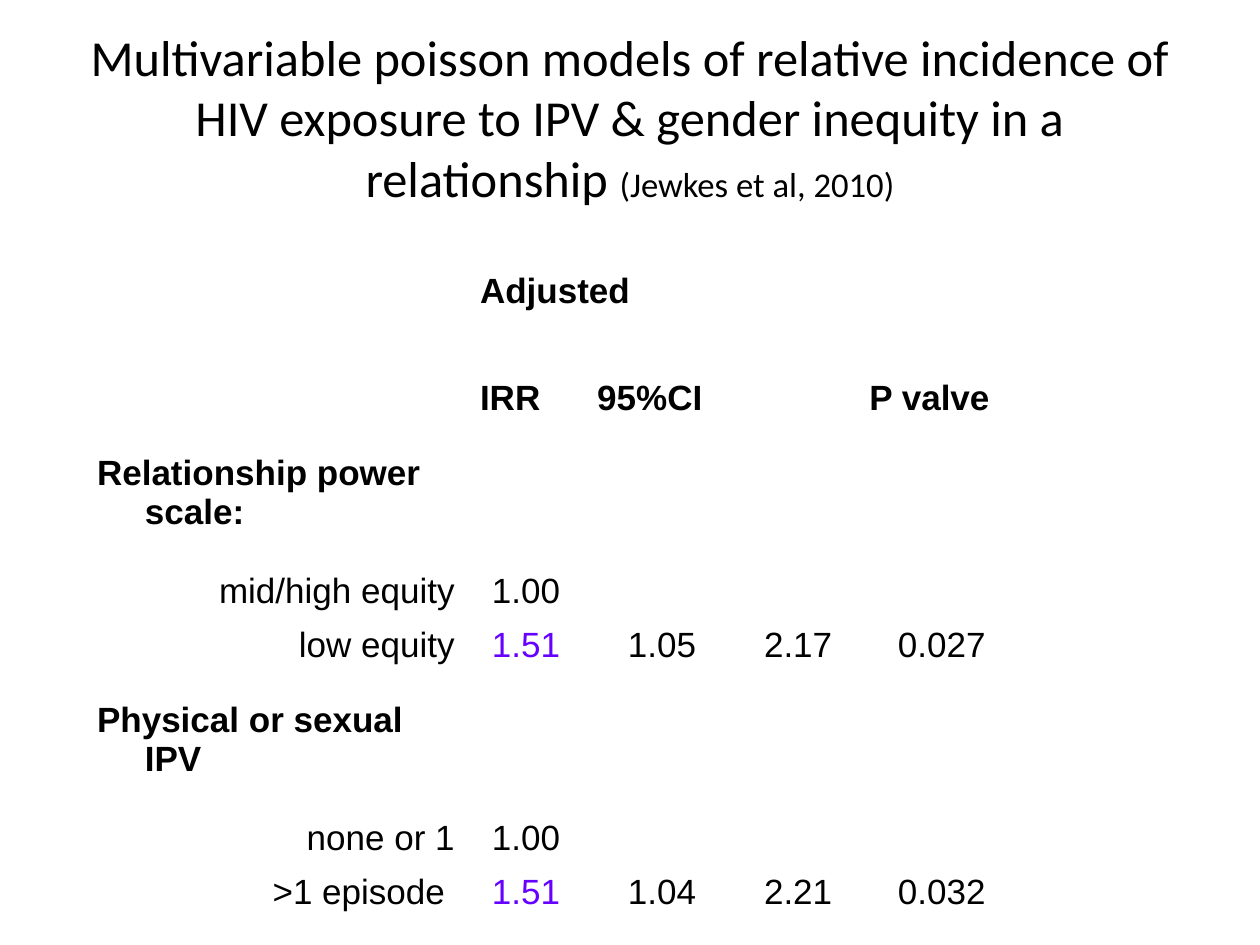
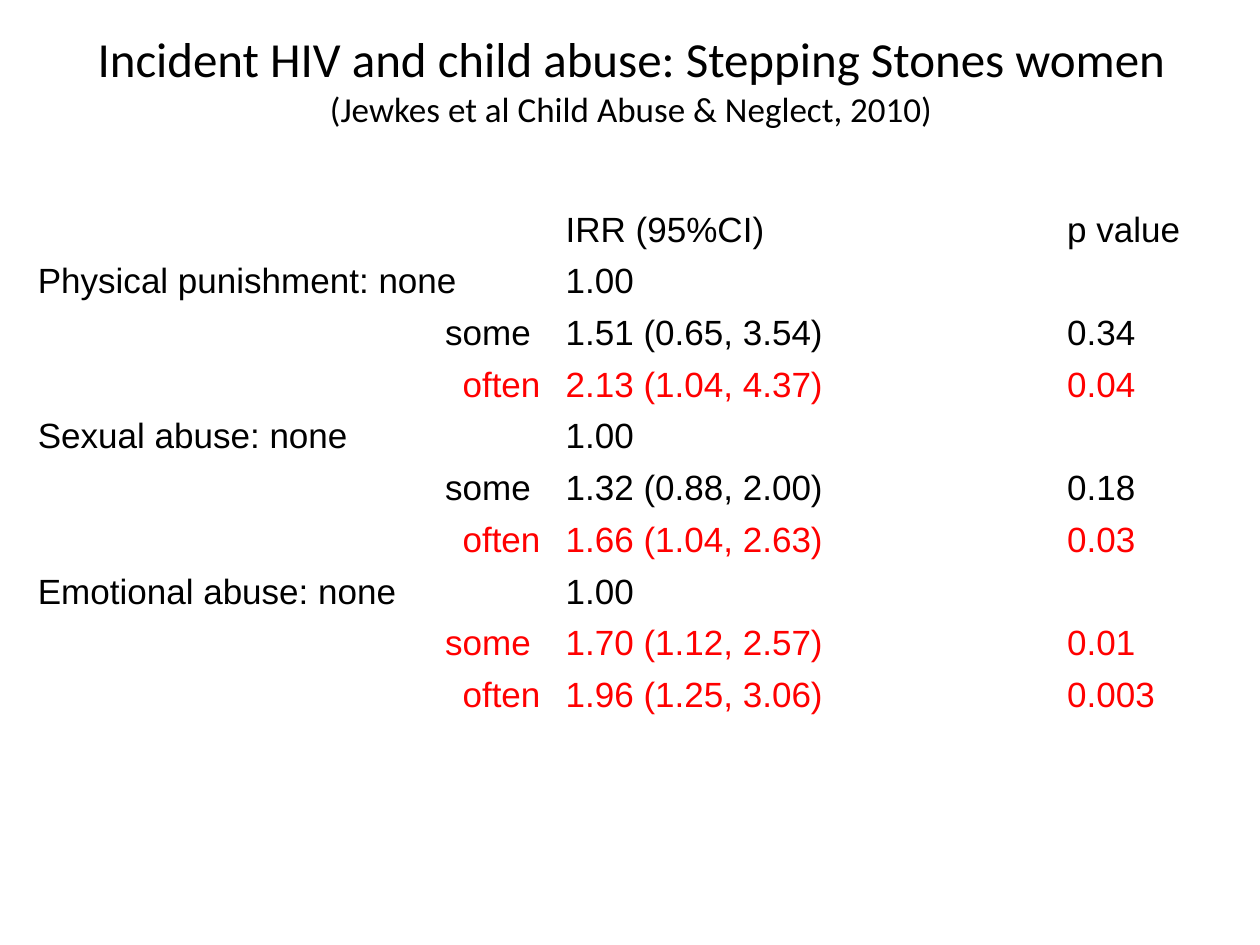
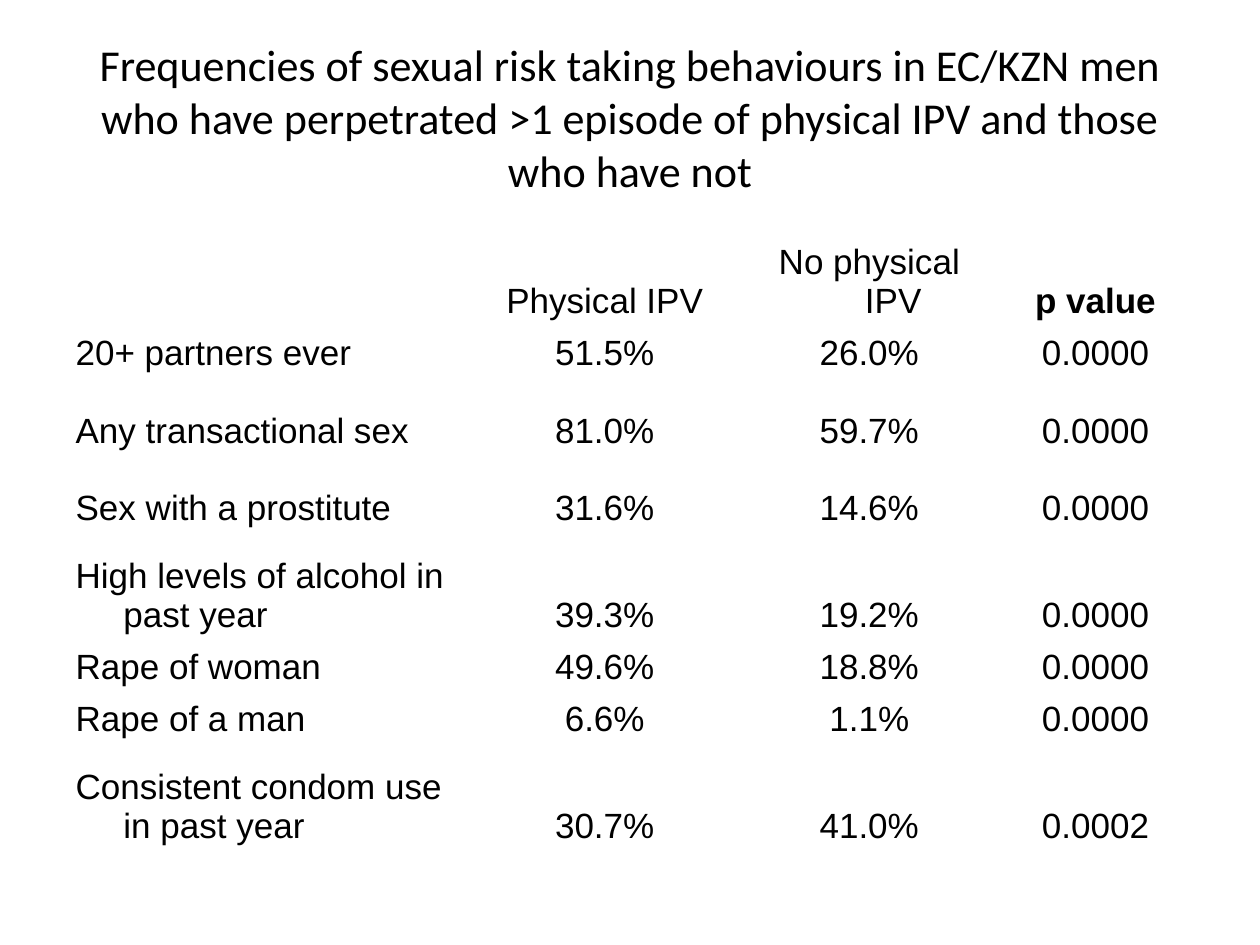
from pptx import Presentation
from pptx.dml.color import RGBColor
from pptx.enum.text import MSO_ANCHOR, MSO_AUTO_SIZE, PP_ALIGN
from pptx.util import Inches, Pt

BLACK, PURPLE, RED = "000000", "6600FF", "FF0000"
GRID_COLUMNS, GRID_ROWS = 100, 75
TITLE_ONLY = 5


def color(hex_string):
    return RGBColor.from_string(hex_string)


class Deck:
    """Holds the shared style and the slide being filled."""

    title_font, table_font = "Calibri", "Arial"
    table_size = 20
    hanging_indent = Inches(0.38)

    def __init__(self):
        self.presentation = Presentation()
        self.presentation.slide_width = Inches(10)
        self.presentation.slide_height = Inches(7.5)
        self.slide = None

    def across(self, columns):
        return round(self.presentation.slide_width * columns / GRID_COLUMNS)

    def down(self, rows):
        return round(self.presentation.slide_height * rows / GRID_ROWS)

    def add_slide(self):
        layout = self.presentation.slide_layouts[TITLE_ONLY]
        self.slide = self.presentation.slides.add_slide(layout)

    def add_title(self, *parts, left=5, top=3):
        """Each part is a (text, point size) pair."""
        title = self.slide.shapes.title
        title.left, title.top = self.across(left), self.down(top)
        title.width, title.height = self.across(90), self.down(12.5)
        frame = title.text_frame
        frame.auto_size = MSO_AUTO_SIZE.NONE
        frame.vertical_anchor = MSO_ANCHOR.MIDDLE
        paragraph = frame.paragraphs[0]
        paragraph.alignment = PP_ALIGN.CENTER
        paragraph.font.name = self.title_font
        paragraph.font.color.rgb = color(BLACK)
        for text, size in parts:
            run = paragraph.add_run()
            run.text = text
            run.font.size = Pt(size)

    def add_table(self, left, top, widths, heights, rows, style):
        """style(row number, column number, row) gives a cell's settings."""
        table = self.slide.shapes.add_table(
            len(rows), len(widths), self.across(left), self.down(top),
            self.across(sum(widths)), self.down(sum(heights))).table
        table.first_row = table.horz_banding = False
        for column, width in zip(table.columns, widths):
            column.width = self.across(width)
        for table_row, height in zip(table.rows, heights):
            table_row.height = self.down(height)
        for row_number, row in enumerate(rows):
            for column_number in range(len(widths)):
                text = row[column_number] if column_number < len(row) else ""
                self.fill_cell(table.cell(row_number, column_number), text,
                               **style(row_number, column_number, row))
        return table

    def fill_cell(self, cell, text, align=PP_ALIGN.LEFT, bold=False, ink=BLACK):
        cell.fill.background()
        cell.vertical_anchor = MSO_ANCHOR.BOTTOM
        paragraph = cell.text_frame.paragraphs[0]
        paragraph.text = text
        paragraph.alignment = align
        font = paragraph.font
        font.name, font.size, font.bold = self.table_font, Pt(self.table_size), bold
        font.color.rgb = color(ink)
        properties = paragraph._p.get_or_add_pPr()
        properties.set("marL", str(self.hanging_indent))
        properties.set("indent", str(-self.hanging_indent))


def incidence_style(row_number, column_number, row):
    if row_number < 2 or len(row) == 1:
        return {"bold": True}
    if column_number == 0:
        return {"align": PP_ALIGN.RIGHT}
    raised = column_number == 1 and len(row) > 2
    return {"align": PP_ALIGN.CENTER, "ink": PURPLE if raised else BLACK}


def abuse_style(row_number, column_number, row):
    has_p_value = row_number > 0 and len(row) == 3
    significant = has_p_value and float(row[2]) < 0.05
    level = has_p_value and column_number == 0
    return {"align": PP_ALIGN.RIGHT if level else PP_ALIGN.LEFT,
            "ink": RED if significant else BLACK}


def behaviour_style(row_number, column_number, row):
    return {"align": PP_ALIGN.CENTER if column_number else PP_ALIGN.LEFT,
            "bold": row_number == 0 and column_number == 3}


def add_incidence_slide(deck):
    deck.add_slide()
    deck.add_title(
        ("Multivariable poisson models of relative incidence of HIV exposure "
         "to IPV & gender inequity in a relationship ", 28.8),
        ("(Jewkes et al, 2010)", 19.8))
    group_heights = [9, 6.3, 4.3]
    table = deck.add_table(
        6.7, 18.6, [30.4, 9.3, 12.3, 9.3, 13.5], [9, 6.1] + group_heights * 2,
        [["", "Adjusted"],
         ["", "IRR", "95%CI", "", "P valve"],
         ["Relationship power scale:"],
         ["mid/high equity", "1.00"],
         ["low equity", "1.51", "1.05", "2.17", "0.027"],
         ["Physical or sexual IPV"],
         ["none or 1", "1.00"],
         [">1 episode ", "1.51", "1.04", "2.21", "0.032"]],
        incidence_style)
    adjusted = table.cell(0, 1)
    adjusted.merge(table.cell(0, 4))
    adjusted.vertical_anchor = MSO_ANCHOR.MIDDLE


def add_abuse_slide(deck):
    deck.add_slide()
    deck.add_title(
        ("Incident HIV and child abuse: Stepping Stones women ", 28),
        ("(Jewkes et al Child Abuse & Neglect, 2010)", 20), left=5.1, top=0)
    rows = [
        ["", "IRR (95%CI)", "p value"],
        ["Physical punishment: none", "1.00"],
        ["some ", "1.51 (0.65, 3.54)", "0.34"],
        ["often", "2.13 (1.04, 4.37)", "0.04"],
        ["Sexual abuse: none", "1.00"],
        ["some ", "1.32 (0.88, 2.00)", "0.18"],
        ["often", "1.66 (1.04, 2.63)", "0.03"],
        ["Emotional abuse: none", "1.00"],
        ["some ", "1.70 (1.12, 2.57)", "0.01"],
        ["often", "1.96 (1.25, 3.06)", "0.003"]]
    deck.add_table(2, 16.2, [41.9, 39.8, 20.8], [4.1] * len(rows), rows, abuse_style)


def add_behaviour_slide(deck):
    deck.add_slide()
    deck.add_title(
        ("Frequencies of sexual risk taking behaviours in EC/KZN men who have "
         "perpetrated >1 episode of physical IPV and those who have not", 25.2))
    deck.add_table(
        5, 17.5, [31.9, 22.2, 19.8, 16.1],
        [8.5, 3.8, 6.2, 6.1, 8.5, 4, 3.8, 8.5],
        [["", "Physical IPV", "No physical IPV", "p value"],
         ["20+ partners ever", "51.5%", "26.0%", "0.0000"],
         ["Any transactional sex", "81.0%", "59.7%", "0.0000"],
         ["Sex with a prostitute", "31.6%", "14.6%", "0.0000"],
         ["High levels of alcohol in past year", "39.3%", "19.2%", "0.0000"],
         ["Rape of woman", "49.6%", "18.8%", "0.0000"],
         ["Rape of a man", "6.6%", "1.1%", "0.0000"],
         ["Consistent condom use in past year", "30.7%", "41.0%", "0.0002"]],
        behaviour_style)


def main():
    deck = Deck()
    add_incidence_slide(deck)
    add_abuse_slide(deck)
    add_behaviour_slide(deck)
    deck.presentation.save("out.pptx")


if __name__ == "__main__":
    main()
